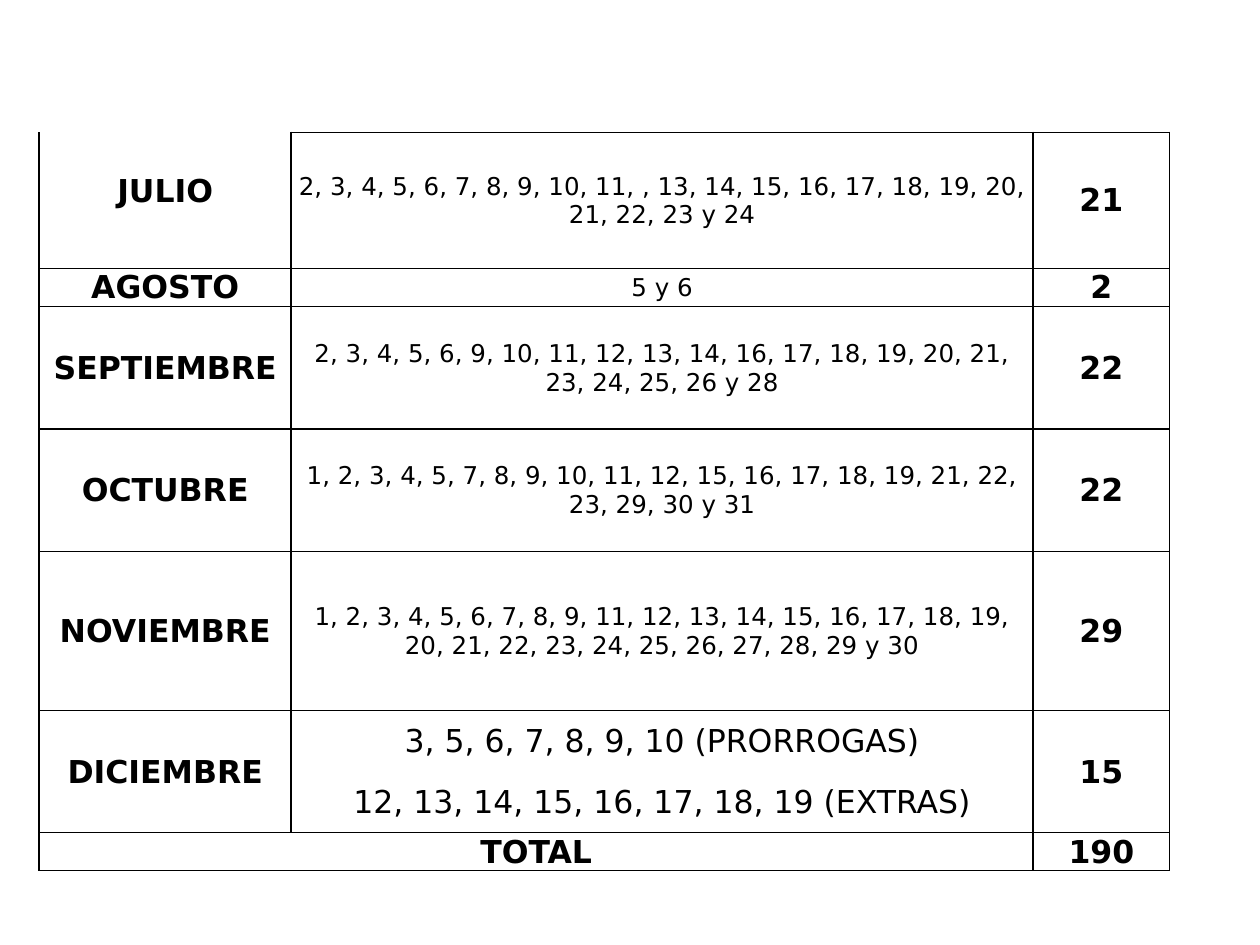
from lxml import etree
from pptx import Presentation
from pptx.dml.color import RGBColor
from pptx.enum.text import MSO_ANCHOR, PP_ALIGN
from pptx.oxml.ns import qn
from pptx.util import Pt

CENTER = PP_ALIGN.CENTER
MIDDLE = MSO_ANCHOR.MIDDLE
COLORS = {"ink": "000000", "paper": "FFFFFF"}
INSETS = {"margin_left": Pt(0.7), "margin_right": Pt(0.7),
          "margin_top": Pt(0.7), "margin_bottom": Pt(0)}
SIDES = "LRTB"

COLUMN_WIDTHS = [144, 424, 78]
ROW_HEIGHTS = [21.2, 21.2, 33, 21.2, 70, 70, 91, 34.9, 34.9, 21.2]

# Row, column, text, size, bold
DAYS = [
    (0, "2, 3, 4, 5, 6, 7, 8, 9, 10, 11, , 13, 14, 15, 16, 17, 18, 19, 20, "
        "21, 22, 23 y 24", 14),
    (3, "5 y 6", 14),
    (4, "2, 3, 4, 5, 6, 9, 10, 11, 12, 13, 14, 16, 17, 18, 19, 20, 21, "
        "23, 24, 25, 26 y 28", 14),
    (5, "1, 2, 3, 4, 5, 7, 8, 9, 10, 11, 12, 15, 16, 17, 18, 19, 21, 22, "
        "23, 29, 30 y 31", 14),
    (6, "1, 2, 3, 4, 5, 6, 7, 8, 9, 11, 12, 13, 14, 15, 16, 17, 18, 19, "
        "20, 21, 22, 23, 24, 25, 26, 27, 28, 29 y 30", 14),
    (7, "3, 5, 6, 7, 8, 9, 10 (PRORROGAS)", 18),
    (8, "12, 13, 14, 15, 16, 17, 18, 19 (EXTRAS)", 18),
]
MONTHS = [(1, "JULIO"), (3, "AGOSTO"), (4, "SEPTIEMBRE"), (5, "OCTUBRE"),
          (6, "NOVIEMBRE"), (7, "DICIEMBRE"), (9, "TOTAL")]
COUNTS = [(0, "21"), (3, "2"), (4, "22"), (5, "22"), (6, "29"), (7, "15"),
          (9, "190")]

# First and last cell of each merged area
MERGES = [((0, 1), (2, 1)), ((0, 2), (2, 2)), ((7, 0), (8, 0)),
          ((7, 2), (8, 2)), ((9, 0), (9, 1))]
# Cells that lack some of their four borders
OPEN_CELLS = {(0, 0): "LR", (1, 0): "LR", (2, 0): "LRB",
              (7, 1): "LRT", (8, 1): "LRB"}


class Deck:
    def __init__(self, width, height, font):
        self.file = Presentation()
        self.file.slide_width, self.file.slide_height = Pt(width), Pt(height)
        self.font = font
        self.page = None

    def add_page(self):
        self.page = self.file.slides.add_slide(self.file.slide_layouts[6])
        fill = self.page.background.fill
        fill.solid()
        fill.fore_color.rgb = RGBColor.from_string(COLORS["paper"])

    def add_table(self, left, top, widths, heights):
        frame = self.page.shapes.add_table(
            len(heights), len(widths), Pt(left), Pt(top),
            Pt(sum(widths)), Pt(sum(heights)))
        table = frame.table
        table.first_row = table.horz_banding = False
        for column, width in zip(table.columns, widths):
            column.width = Pt(width)
        for row, height in zip(table.rows, heights):
            row.height = Pt(height)
        return table

    def style_cell(self, cell, sides):
        for name, value in INSETS.items():
            setattr(cell, name, value)
        cell.vertical_anchor = MIDDLE
        properties = cell._tc.get_or_add_tcPr()
        for side in SIDES:
            line = etree.SubElement(properties, qn("a:ln" + side), w=str(Pt(1)))
            if side in sides:
                fill = etree.SubElement(line, qn("a:solidFill"))
                etree.SubElement(fill, qn("a:srgbClr"), val=COLORS["ink"])
            else:
                etree.SubElement(line, qn("a:noFill"))
        cell.fill.background()

    def write_cell(self, cell, text, size=18, bold=True):
        para = cell.text_frame.paragraphs[0]
        para.alignment = CENTER
        span = para.add_run()
        span.text = text
        formats = {"name": self.font, "size": Pt(size), "bold": bold}
        for name, value in formats.items():
            setattr(span.font, name, value)
        span.font.color.rgb = RGBColor.from_string(COLORS["ink"])


def main():
    deck = Deck(720, 540, "DejaVu Sans")
    deck.add_page()

    # Calendar grid
    table = deck.add_table(22.4, 75.6, COLUMN_WIDTHS, ROW_HEIGHTS)
    for row in range(len(ROW_HEIGHTS)):
        for column in range(len(COLUMN_WIDTHS)):
            sides = OPEN_CELLS.get((row, column), SIDES)
            deck.style_cell(table.cell(row, column), sides)
    for first, last in MERGES:
        table.cell(*first).merge(table.cell(*last))

    # Months, days and day counts
    for row, month in MONTHS:
        deck.write_cell(table.cell(row, 0), month)
    for row, days, size in DAYS:
        deck.write_cell(table.cell(row, 1), days, size, bold=False)
    for row, count in COUNTS:
        deck.write_cell(table.cell(row, 2), count)

    deck.file.save("out.pptx")


if __name__ == "__main__":
    main()
